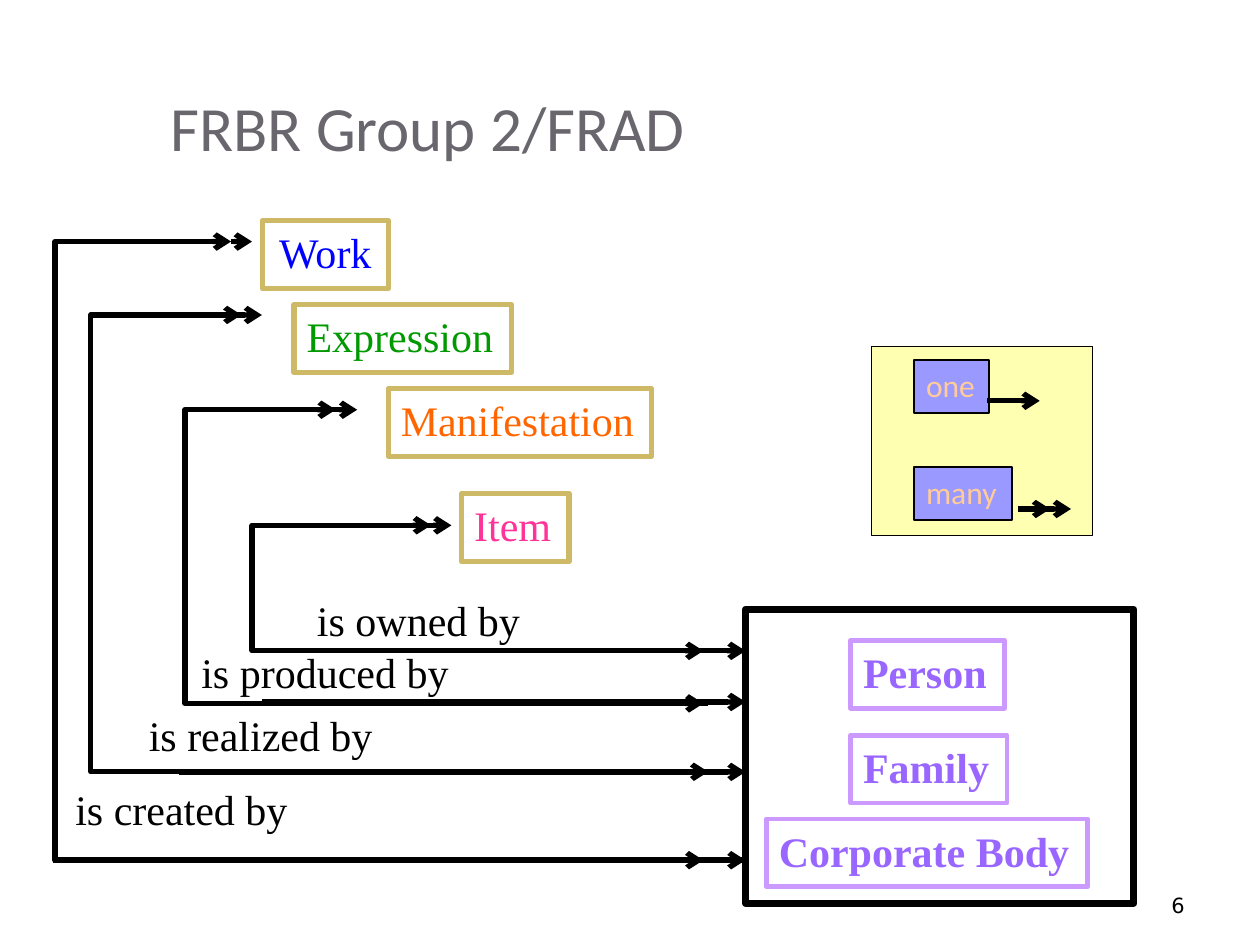
from lxml import etree
from pptx import Presentation
from pptx.dml.color import RGBColor
from pptx.enum.shapes import MSO_CONNECTOR, MSO_SHAPE
from pptx.enum.text import MSO_ANCHOR, PP_ALIGN
from pptx.oxml.ns import qn
from pptx.util import Cm, Pt

RECTANGLE = MSO_SHAPE.RECTANGLE
STRAIGHT, ELBOW = MSO_CONNECTOR.STRAIGHT, MSO_CONNECTOR.ELBOW
LEFT, CENTER, RIGHT = PP_ALIGN.LEFT, PP_ALIGN.CENTER, PP_ALIGN.RIGHT
TOP, MIDDLE, BOTTOM = MSO_ANCHOR.TOP, MSO_ANCHOR.MIDDLE, MSO_ANCHOR.BOTTOM

COLORS = {
    "black": "000000", "title": "69676D", "gold": "CEB966", "work": "0000FF",
    "expression": "009900", "manifestation": "FF6600", "item": "FF3399",
    "lilac": "CC99FF", "agent": "9966FF", "legend": "FFFF66",
    "key": "9999FF", "key text": "FFCC99",
}
ENTITY = {"name": "Times New Roman", "size": Pt(24)}
AGENT = {**ENTITY, "bold": True}
KEY = {"name": "Calibri", "size": Pt(18)}
BOX_HEIGHT = 1.37


def write(shape, text, color, font, align=LEFT, anchor=TOP, wrap=False):
    frame = shape.text_frame
    frame.word_wrap = wrap
    frame.vertical_anchor = anchor
    para = frame.paragraphs[0]
    para.alignment = align
    span = para.add_run()
    span.text = text
    for attribute, value in font.items():
        setattr(span.font, attribute, value)
    span.font.color.rgb = RGBColor.from_string(COLORS[color])


def outline(shape, color, width, fill=None):
    shape.shadow.inherit = False
    shape.line.color.rgb = RGBColor.from_string(COLORS[color])
    shape.line.width = Pt(width)
    if fill:
        shape.fill.solid()
        shape.fill.fore_color.rgb = RGBColor.from_string(COLORS[fill])
    else:
        shape.fill.background()


deck = Presentation()
deck.slide_width, deck.slide_height = Cm(25.4), Cm(19.05)
page = deck.slides.add_slide(deck.slide_layouts[5])

title = page.shapes.title
title.left, title.top, title.width, title.height = Cm(3.18), Cm(1.27), Cm(16.08), Cm(2.54)
write(title, "FRBR Group 2/FRAD", "title", {"name": "Calibri", "size": Pt(36)},
      anchor=MIDDLE, wrap=True)

number = page.shapes.add_textbox(Cm(18.21), Cm(17.35), Cm(5.92), Cm(1.27))
write(number, "6", "black", {"name": "DejaVu Sans", "size": Pt(12)}, RIGHT, BOTTOM, True)

# Frame around the agents, and the legend panel
agents = page.shapes.add_shape(RECTANGLE, Cm(15.03), Cm(12.28), Cm(7.83), Cm(5.93))
outline(agents, "black", 4)
legend = page.shapes.add_shape(RECTANGLE, Cm(17.57), Cm(6.99), Cm(4.45), Cm(3.81))
outline(legend, "black", 0.75, "legend")
legend_color = legend.fill._xPr.find(f".//{qn('a:srgbClr')}")
etree.SubElement(legend_color, qn("a:alpha"), val="50000")

# text, left, top, width, height, text colour, font, line colour, line width, fill
boxes = [
    ("Work", 5.29, 4.45, 2.54, BOX_HEIGHT, "work", ENTITY, "gold", 3, None),
    ("Expression", 5.93, 6.14, 4.38, BOX_HEIGHT, "expression", ENTITY, "gold", 3, None),
    ("Manifestation", 7.83, 7.83, 5.3, BOX_HEIGHT, "manifestation", ENTITY, "gold", 3, None),
    ("Item", 9.31, 9.95, 2.16, BOX_HEIGHT, "item", ENTITY, "gold", 3, None),
    ("Person", 17.15, 12.91, 3.1, BOX_HEIGHT, "agent", AGENT, "lilac", 2.75, None),
    ("Family", 17.15, 14.82, 3.15, BOX_HEIGHT, "agent", AGENT, "lilac", 2.75, None),
    ("Corporate Body", 15.45, 16.51, 6.48, BOX_HEIGHT, "agent", AGENT, "lilac", 2.75, None),
    ("one", 18.42, 7.26, 1.52, 1.07, "key text", KEY, "black", 1, "key"),
    ("many", 18.42, 9.42, 1.98, 1.07, "key text", KEY, "black", 1, "key"),
]
for text, left, top, width, height, color, font, line, weight, fill in boxes:
    box = page.shapes.add_shape(RECTANGLE, Cm(left), Cm(top), Cm(width), Cm(height))
    outline(box, line, weight, fill)
    write(box, text, color, font, CENTER if text == "Work" else LEFT)

relations = [
    ("is owned by", 6.14, 11.85, 4.6),
    ("is produced by", 3.81, 12.91, 5.49),
    ("is realized by", 2.75, 14.18, 5.03),
    ("is created by", 1.27, 15.66, 4.78),
]
for text, left, top, width in relations:
    label = page.shapes.add_textbox(Cm(left), Cm(top), Cm(width), Cm(1.27))
    write(label, text, "black", ENTITY)

# start x, start y, end x, end y, x of the upright part (None if straight), arrowheads
links = [
    (4.66, 4.87, 15.1, 17.34, 1.11, ["headEnd"]),
    (14.28, 15.56, 4.87, 6.35, 1.83, ["headEnd", "tailEnd"]),
    (6.77, 8.26, 14.28, 14.18, 3.73, ["headEnd"]),
    (8.69, 10.59, 13.34, 13.12, 5.08, ["headEnd"]),
]
# y, start x, end x
arrows = [
    (4.87, 4.66, 5.08), (6.35, 4.24, 5.28), (8.26, 5.28, 7.2), (10.59, 6.35, 9.1),
    (13.12, 10.8, 15.03), (13.12, 9.95, 14.18),
    (14.18, 4.45, 14.18), (14.15, 5.28, 15.03),
    (15.56, 3.6, 15.03),
    (17.34, 1.06, 14.18), (17.34, 1.69, 15.03),
    (8.08, 19.9, 20.96), (10.26, 20.53, 21.59), (10.26, 20.53, 21.17),
]
links += [(start, y, end, y, None, ["tailEnd"]) for y, start, end in arrows]

for x1, y1, x2, y2, bend, ends in links:
    kind = STRAIGHT if bend is None else ELBOW
    link = page.shapes.add_connector(kind, Cm(x1), Cm(y1), Cm(x2), Cm(y2))
    link.line.color.rgb = RGBColor.from_string(COLORS["black"])
    link.line.width = Pt(3)
    properties = link._element.spPr
    line = properties.find(qn("a:ln"))
    for end in ends:
        etree.SubElement(line, qn(f"a:{end}"), type="arrow")
    etree.SubElement(properties, qn("a:effectLst"))
    if bend is not None:
        share = round((bend - x1) / (x2 - x1) * 100000)
        guides = properties.find(f".//{qn('a:avLst')}")
        etree.SubElement(guides, qn("a:gd"), name="adj1", fmla=f"val {share}")

deck.save("out.pptx")
